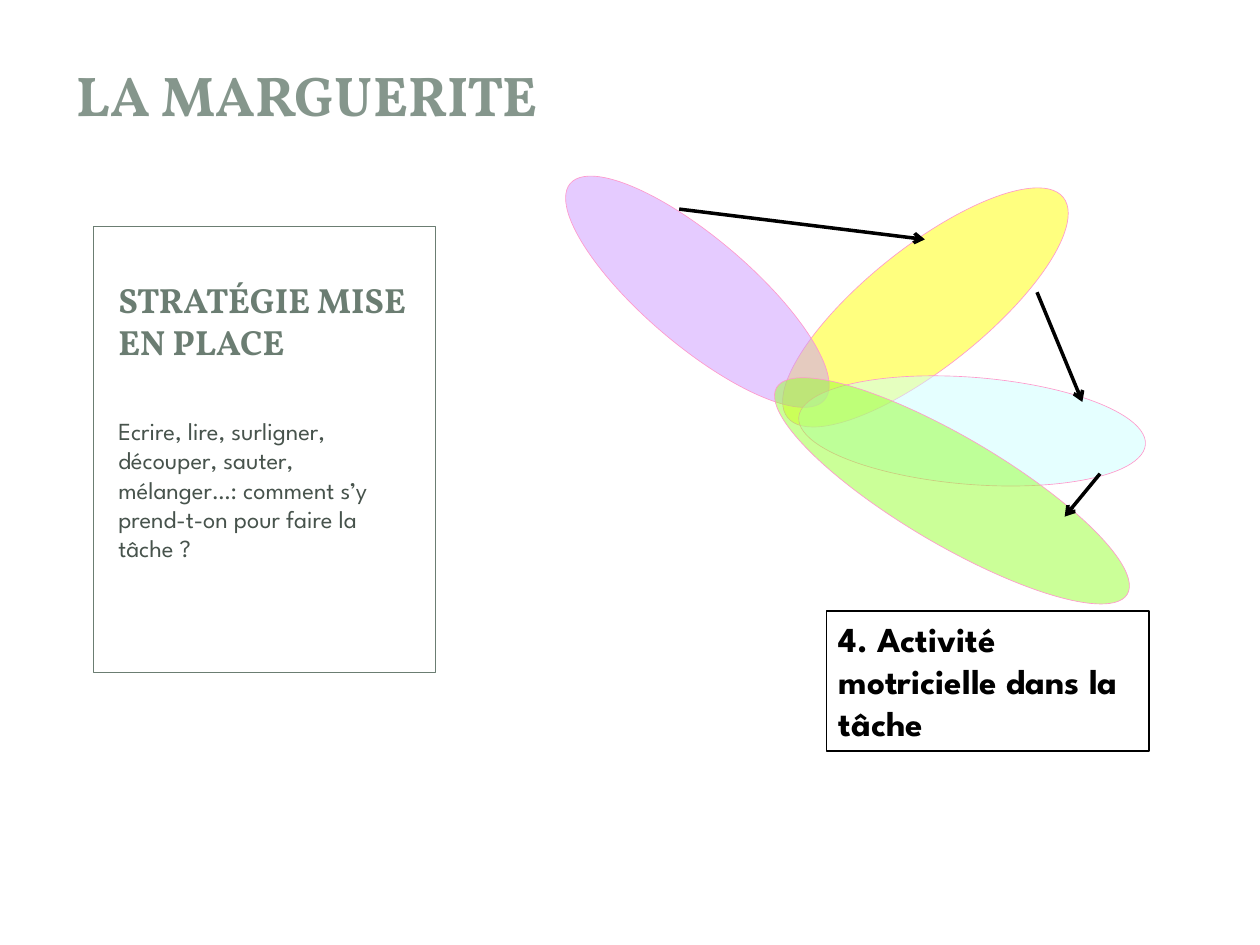
import pptx
import pptx.dml.color
import pptx.enum.shapes
import pptx.enum.text
import pptx.oxml.ns
import pptx.util
from lxml import etree

Pt = pptx.util.Pt
RGBColor = pptx.dml.color.RGBColor
SHAPES = pptx.enum.shapes.MSO_SHAPE
ANCHOR = pptx.enum.text.MSO_ANCHOR
qn = pptx.oxml.ns.qn

SAGE = RGBColor(0x85, 0x96, 0x8C)
DARK_SAGE = RGBColor(0x6B, 0x7D, 0x72)
BODY_GREEN = RGBColor(0x47, 0x53, 0x4C)
BLACK = RGBColor(0, 0, 0)
WHITE = RGBColor(0xFF, 0xFF, 0xFF)
PINK = RGBColor(0xFF, 0x99, 0xCC)
YELLOW = RGBColor(0xFF, 0xFF, 0)
PURPLE = RGBColor(0xCC, 0x99, 0xFF)
CYAN = RGBColor(0xCC, 0xFF, 0xFF)
GREEN = RGBColor(0x99, 0xFF, 0x33)


class DaisySlide:
    heading_font = "Vollkorn"
    body_font = "League Spartan"

    def __init__(self, slide):
        self.slide = slide

    def frame(self, box, color, width, fill=None):
        frame = self.slide.shapes.add_shape(SHAPES.RECTANGLE, *map(Pt, box))
        frame.shadow.inherit = False
        if fill is None:
            frame.fill.background()
        else:
            frame.fill.solid()
            frame.fill.fore_color.rgb = fill
        frame.line.color.rgb = color
        frame.line.width = Pt(width)
        return frame

    def set_text(self, frame, words, font, size, color, bold=False,
                 anchor=ANCHOR.TOP, before=0, bottom=3.6):
        text = frame.text_frame
        text.word_wrap = True
        text.vertical_anchor = anchor
        text.margin_bottom = Pt(bottom)
        paragraph = text.paragraphs[0]
        paragraph.text = words
        paragraph.alignment = pptx.enum.text.PP_ALIGN.LEFT
        paragraph.space_before = Pt(before)
        paragraph.font.name = font
        paragraph.font.size = Pt(size)
        paragraph.font.bold = bold
        paragraph.font.color.rgb = color

    def text(self, box, *words, **style):
        self.set_text(self.slide.shapes.add_textbox(*map(Pt, box)), *words, **style)

    def petal(self, box, rotation, color):
        petal = self.slide.shapes.add_shape(SHAPES.OVAL, *map(Pt, box))
        petal.shadow.inherit = False
        petal.rotation = rotation
        petal.fill.solid()
        petal.fill.fore_color.rgb = color
        petal.line.color.rgb = PINK
        petal.line.width = Pt(0.37)
        # Half transparency
        tint = petal._element.spPr.find(qn("a:solidFill"))[0]
        etree.SubElement(tint, qn("a:alpha"), val="50000")

    def arrow(self, start, end):
        arrow = self.slide.shapes.add_connector(
            pptx.enum.shapes.MSO_CONNECTOR.STRAIGHT, *map(Pt, start + end))
        arrow.line.color.rgb = BLACK
        arrow.line.width = Pt(2)
        properties = arrow._element.spPr
        etree.SubElement(properties.find(qn("a:ln")), qn("a:tailEnd"), type="arrow")
        etree.SubElement(properties, qn("a:effectLst"))


def main():
    deck = pptx.Presentation()
    deck.slide_width, deck.slide_height = Pt(720), Pt(540)
    daisy = DaisySlide(deck.slides.add_slide(deck.slide_layouts[6]))

    # Strategy card
    daisy.frame((53.3, 129.6, 195.8, 254.9), DARK_SAGE, 0.5, WHITE)
    daisy.text((60.5, 136.8, 180.7, 93.6), "STRATÉGIE MISE EN PLACE",
               daisy.heading_font, 20, DARK_SAGE, bold=True,
               anchor=ANCHOR.BOTTOM, bottom=23)
    daisy.text((60.5, 234, 180.7, 138.2),
               "Ecrire, lire, surligner, découper, sauter, mélanger…: "
               "comment s’y prend-t-on pour faire la tâche ?",
               daisy.body_font, 14, BODY_GREEN, before=4)

    # Label of the current petal
    activity = daisy.frame((472.3, 349.2, 184.3, 79.9), BLACK, 1)
    daisy.set_text(activity, "4. Activité motricielle dans la tâche",
                   daisy.body_font, 20, BLACK, bold=True)

    # Petals
    for box, rotation, color in (
        ((494.6, 74.9, 68.4, 201.6), 51.4, YELLOW),
        ((367.9, 71.3, 61.2, 190.8), 310.4, PURPLE),
        ((524.9, 146.9, 61.2, 198.7), 274.5, CYAN),
        ((513.4, 164.2, 61.2, 232.6), 300.5, GREEN),
    ):
        daisy.petal(box, rotation, color)

    # Slide title
    daisy.text((36.7, 31, 334.8, 46.1), "LA MARGUERITE",
               daisy.heading_font, 32, SAGE, bold=True)

    # Arrows from petal to petal
    for start, end in (
        ((388.1, 119.5), (528.5, 136.8)),
        ((592.6, 167), (618.5, 229.7)),
        ((628.6, 270.7), (608.4, 295.2)),
    ):
        daisy.arrow(start, end)

    deck.save("out.pptx")


if __name__ == "__main__":
    main()
